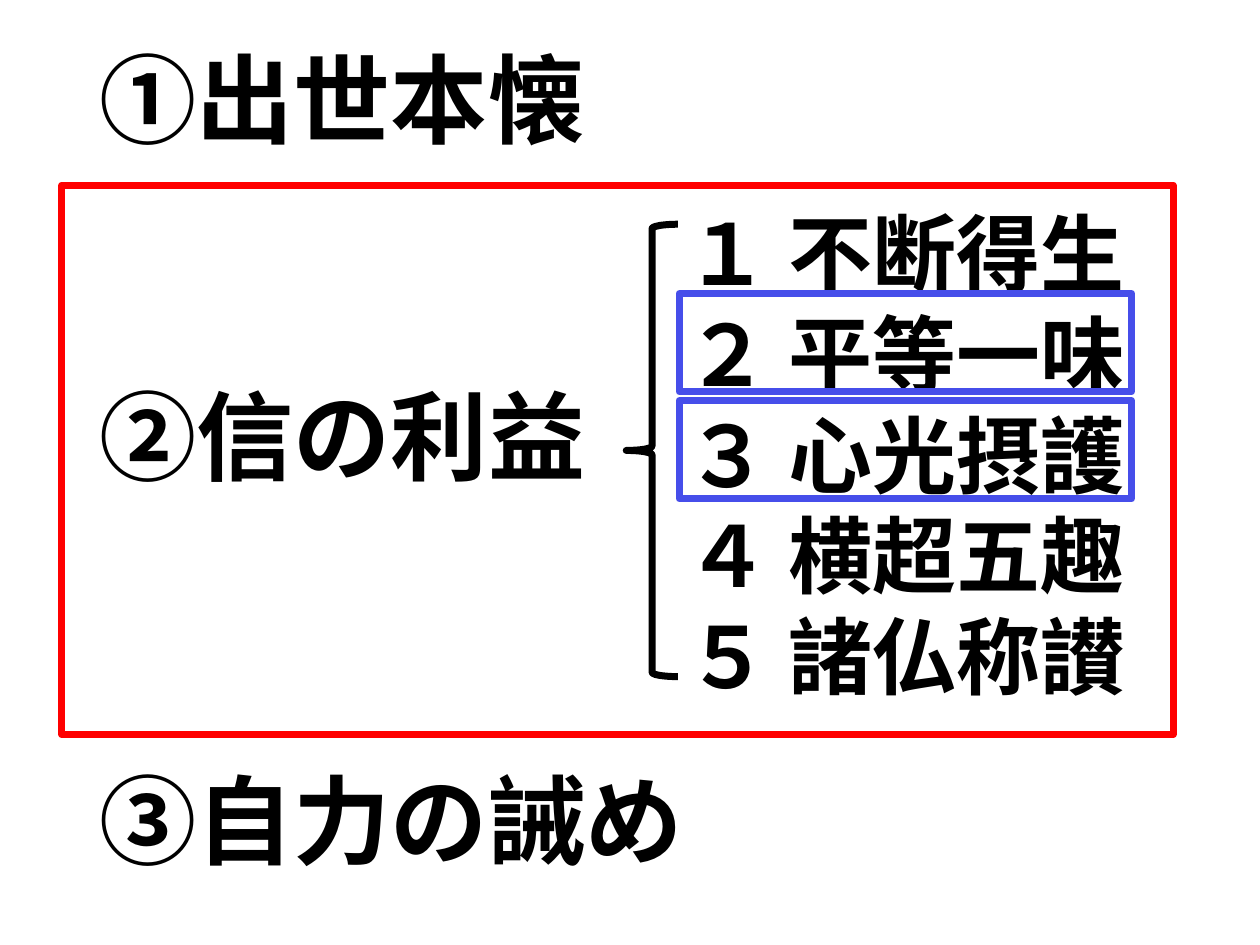
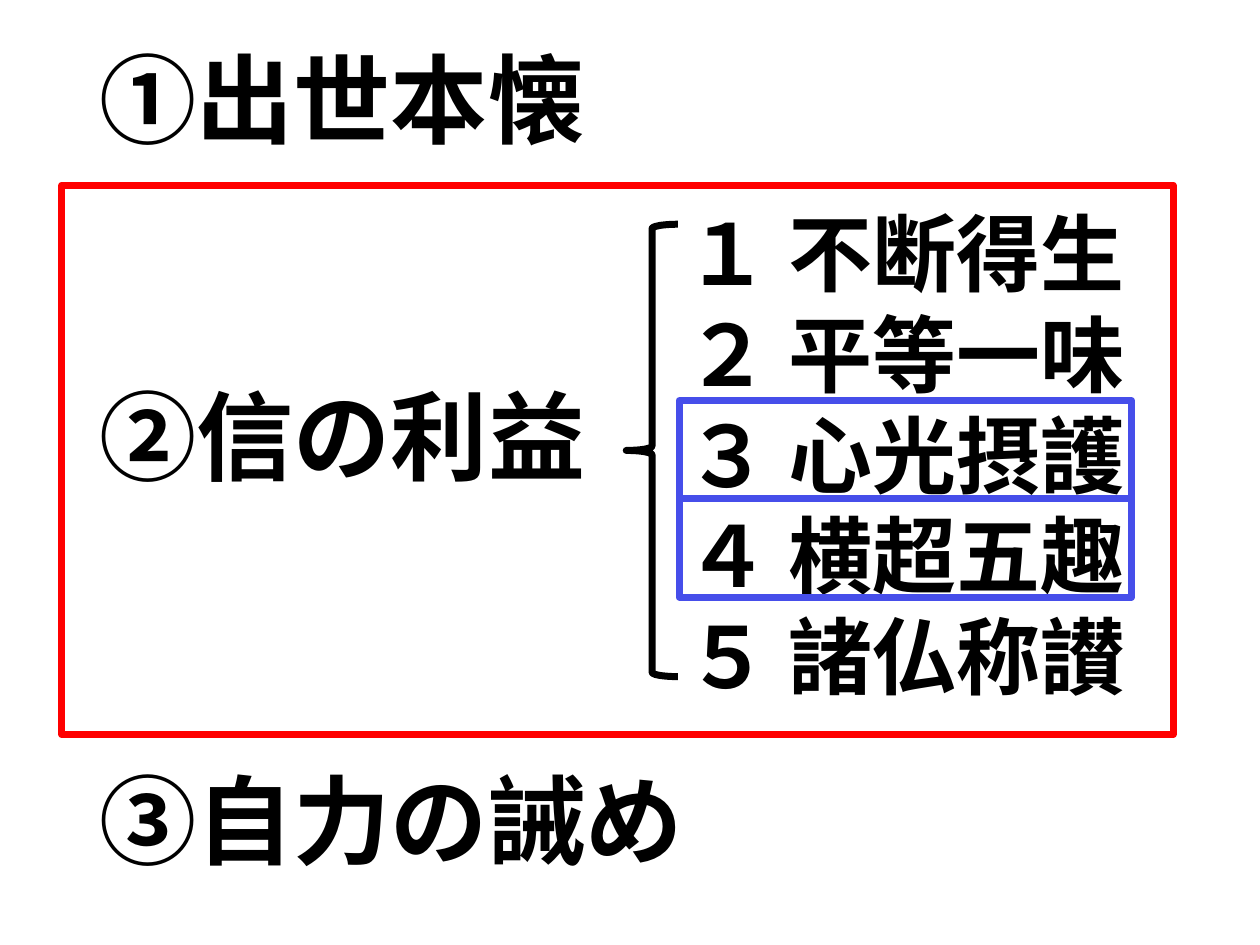
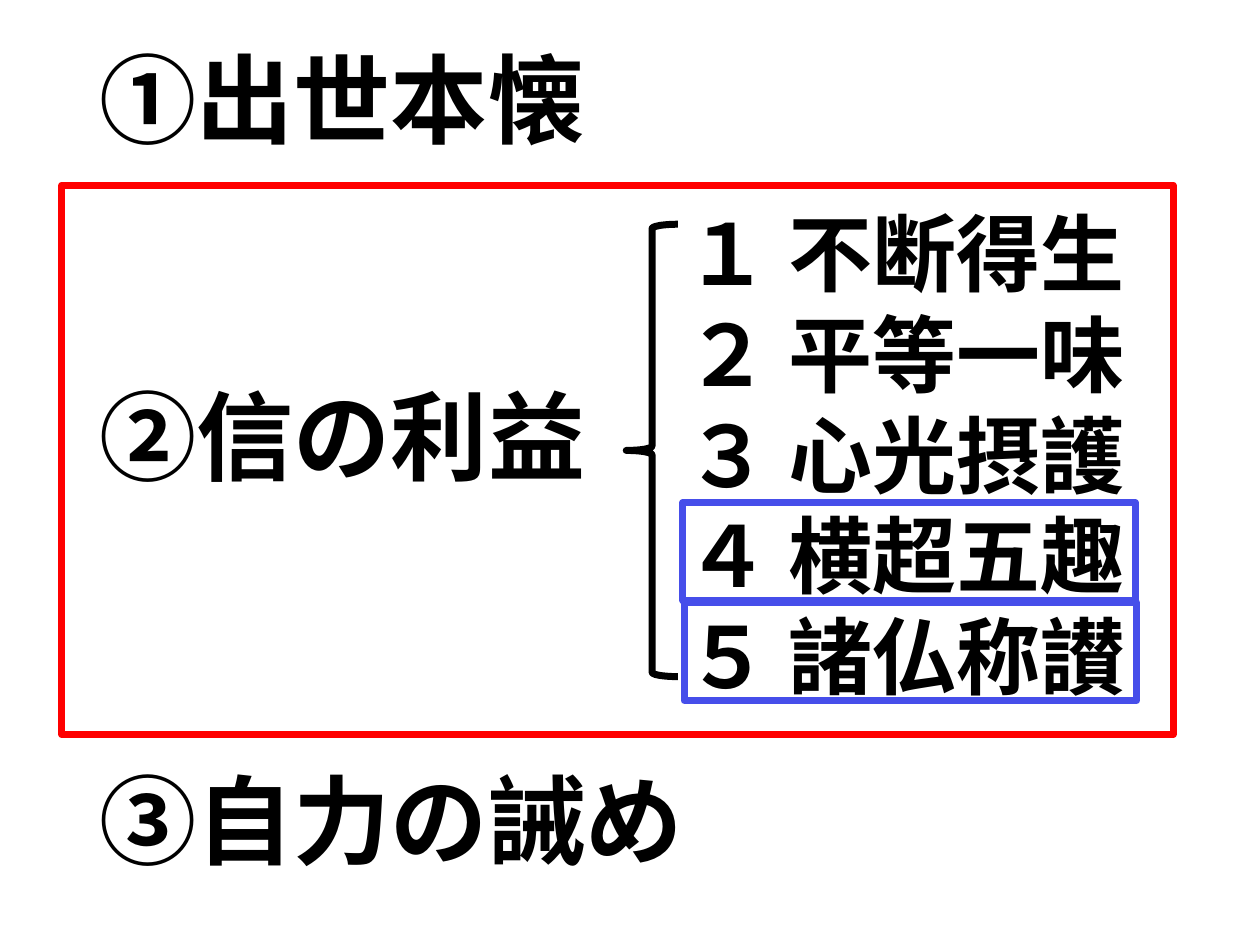
"""Build three slides that step through the benefits of faith."""
from pptx import Presentation
from pptx.dml.color import RGBColor
from pptx.enum.shapes import MSO_SHAPE
from pptx.enum.text import MSO_ANCHOR, MSO_AUTO_SIZE
from pptx.oxml.ns import qn
from pptx.util import Inches, Pt

HEADS = [("①出世本懐", 0), ("②信の利益", 139.5), ("③自力の誡め", 166)]
ITEMS = ["１ 不断得生", "２ 平等一味", "３ 心光摂護", "４ 横超五趣", "５ 諸仏称讃"]
MARKS = [
    [(5.39, 2.33), (5.39, 3.18)],
    [(5.39, 3.18), (5.39, 3.96)],
    [(5.42, 3.99), (5.43, 4.78)],
]
MARK_SIZE = (3.59, 0.78)
BODY = (0.69, 0.44, 8.62, 6.77)
BRACE = (4.97, 1.78, 0.41, 3.59)
LIST = (5.34, 1.55, 4.29, 4.14)
FRAME = (0.49, 1.47, 8.82, 4.36)

FONT = "Calibri"
BLACK = RGBColor(0x00, 0x00, 0x00)
RED = RGBColor(0xFF, 0x00, 0x00)
BLUE = RGBColor(0x46, 0x4E, 0xEA)


def style(para, size):
    for run in para.runs:
        font = run.font
        font.name, font.size, font.bold = FONT, Pt(size), True
        font.color.rgb = BLACK


def fill_lines(frame, lines, size):
    frame.word_wrap = True
    frame.vertical_anchor = MSO_ANCHOR.TOP
    frame.text = "\n".join(lines)
    for para in frame.paragraphs:
        style(para, size)


def add_heads(slide):
    body = slide.placeholders[1]
    body.left, body.top, body.width, body.height = map(Inches, BODY)
    frame = body.text_frame
    frame.auto_size = MSO_AUTO_SIZE.NONE
    fill_lines(frame, [text for text, gap in HEADS], 55.5)
    for para, (text, gap) in zip(frame.paragraphs, HEADS):
        props = para._p.get_or_add_pPr()
        props.set("marL", "0")
        props.set("indent", "0")
        props.append(props.makeelement(qn("a:buNone"), {}))
        para.line_spacing = 0.8
        para.space_before = Pt(gap)


def add_list(slide):
    frame = slide.shapes.add_textbox(*map(Inches, LIST)).text_frame
    fill_lines(frame, ITEMS, 48)
    frame.auto_size = MSO_AUTO_SIZE.SHAPE_TO_FIT_TEXT


def add_line(slide, kind, area, color):
    shape = slide.shapes.add_shape(kind, *map(Inches, area))
    shape.shadow.inherit = False
    shape.fill.background()
    shape.line.color.rgb = color
    shape.line.width = Pt(4)


def add_page(deck, marks):
    slide = deck.slides.add_slide(deck.slide_layouts[1])
    title = slide.shapes.title._element
    title.getparent().remove(title)
    add_heads(slide)
    add_line(slide, MSO_SHAPE.LEFT_BRACE, BRACE, BLACK)
    add_list(slide)
    add_line(slide, MSO_SHAPE.RECTANGLE, FRAME, RED)
    for spot in marks:
        add_line(slide, MSO_SHAPE.RECTANGLE, spot + MARK_SIZE, BLUE)


def main():
    deck = Presentation()
    deck.slide_width, deck.slide_height = Inches(10), Inches(7.5)
    for marks in MARKS:
        add_page(deck, marks)
    deck.save("out.pptx")


if __name__ == "__main__":
    main()
